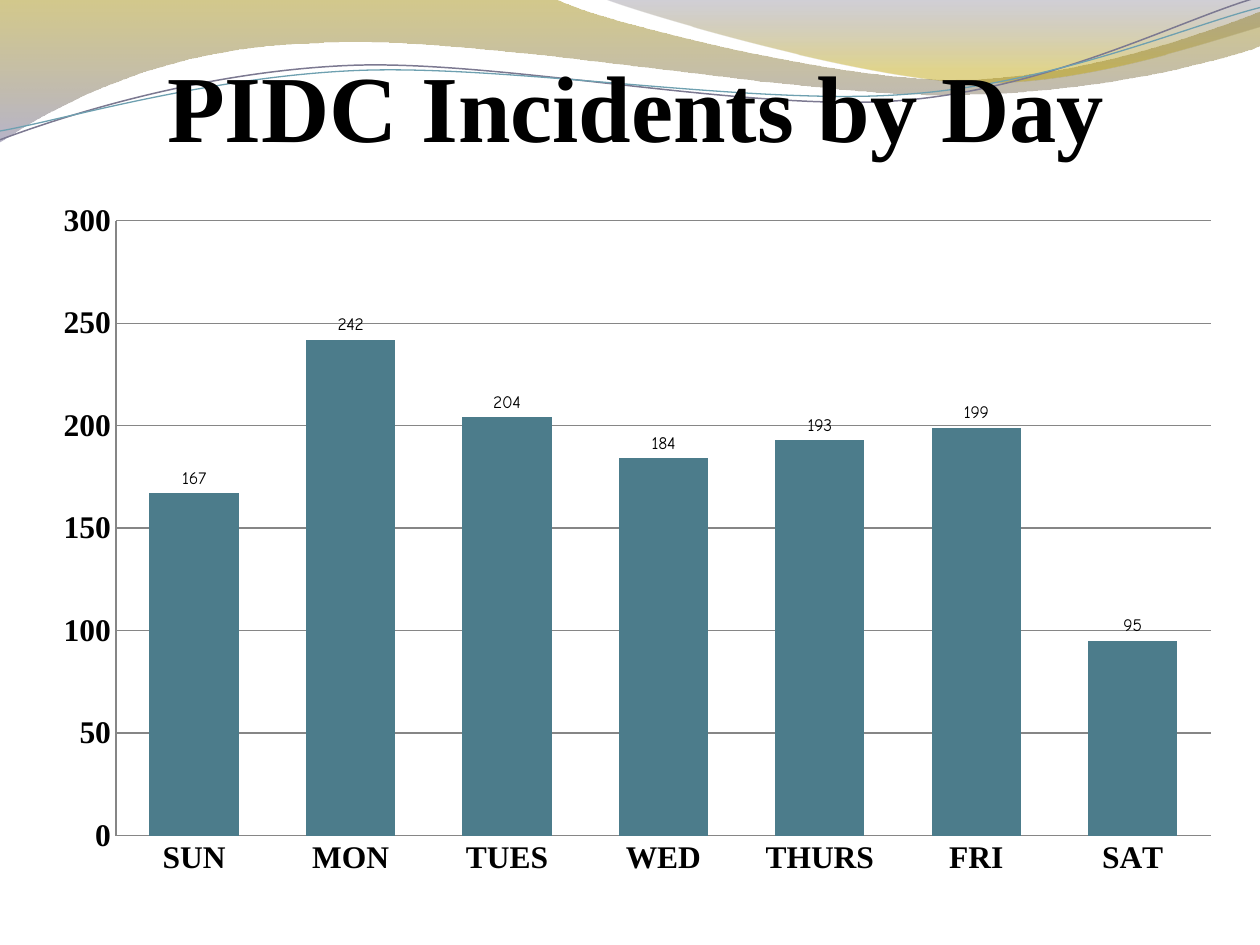
from dataclasses import dataclass

from lxml.etree import SubElement
from pptx import Presentation
from pptx.chart.data import CategoryChartData
from pptx.dml.color import RGBColor
from pptx.enum.chart import XL_CHART_TYPE, XL_LABEL_POSITION, XL_TICK_MARK
from pptx.enum.text import MSO_AUTO_SIZE, PP_ALIGN
from pptx.oxml import parse_xml
from pptx.oxml.ns import nsdecls, qn
from pptx.util import Inches, Pt


@dataclass(frozen=True)
class Theme:
    heading_font: str = "Times New Roman"
    label_font: str = "Comic Neue"
    title_size: int = 54
    axis_size: int = 18
    label_size: int = 10
    text: str = "000000"
    title_outline: str = "4D4D4D"
    bar: str = "4C7C8B"
    grid: str = "868686"
    upper_line: str = "7C7991"
    lower_line: str = "6EA0B0"
    # Gradient stops: position, colour, opacity in percent
    left_wave: tuple = ((0, "9E8700", 45), (1, "7B769C", 55))
    right_wave: tuple = ((0, "66627C", 30), (0.8, "BDA100", 45))


THEME = Theme()

# Each outline is a start point followed by lines (2 numbers) and Bézier curves (6 numbers).
LEFT_WAVE = [
    (0, 0), (4.4, -0.01), (4.76, 0.17, 6.64, 0.63, 7.58, 0.63),
    (8.53, 0.63, 9.58, 0.26, 10, 0.09), (10.01, 0.36),
    (9.83, 0.44, 8.7, 0.76, 7.46, 0.75), (6.22, 0.75, 3.82, 0.28, 2.57, 0.34),
    (1.29, 0.36, 0.46, 0.83, -0.01, 1.13),
]
RIGHT_WAVE = [
    (4.79, -0.01), (5.09, 0.11, 6.82, 0.62, 7.69, 0.65),
    (8.56, 0.69, 9.61, 0.32, 10, 0.21), (10, 0),
]
UPPER_LINE = [
    (0, 1.11), (0.48, 0.93, 1.58, 0.57, 2.77, 0.52),
    (3.95, 0.47, 5.93, 0.89, 7.13, 0.8), (8.33, 0.71, 9.38, 0.15, 9.98, -0.02),
]
LOWER_LINE = [
    (0, 1.04), (0.47, 0.96, 1.64, 0.61, 2.83, 0.56),
    (4.03, 0.51, 5.97, 0.84, 7.17, 0.75), (8.36, 0.67, 9.41, 0.21, 10, 0.06),
]
INCIDENTS = {"SUN": 167, "MON": 242, "TUES": 204, "WED": 184,
             "THURS": 193, "FRI": 199, "SAT": 95}


def rgb(color):
    return RGBColor.from_string(color)


def style_font(font, name, size, bold=False):
    font.name, font.size, font.bold = name, Pt(size), bold
    font.color.rgb = rgb(THEME.text)


def add_outline(slide, outline, close):
    """Draw every point as a line end, then join each curve's three lines into a Bézier."""
    start, *points = [(Inches(x), Inches(y)) for segment in outline
                      for x, y in zip(segment[::2], segment[1::2])]
    builder = slide.shapes.build_freeform(*start)
    builder.add_line_segments(points, close=close)
    shape = builder.convert_to_shape()
    shape.shadow.inherit = False

    lines = iter(list(shape._element.spPr.iter(qn("a:lnTo"))))
    for segment in outline[1:]:
        line = next(lines)
        if len(segment) == 6:
            curve = parse_xml(f'<a:cubicBezTo {nsdecls("a")}/>')
            line.addprevious(curve)
            for part in (line, next(lines), next(lines)):
                curve.append(part[0])
                part.getparent().remove(part)
    return shape


def add_wave(slide, outline, stops):
    wave = add_outline(slide, outline, close=True)
    wave.line.fill.background()
    wave.fill.gradient()
    wave.fill.gradient_angle = 270
    for stop, (position, color, _) in zip(wave.fill.gradient_stops, stops):
        stop.position = position
        stop.color.rgb = rgb(color)
    colors = wave._element.spPr.iter(qn("a:srgbClr"))
    for color, (_, _, opacity) in zip(colors, stops):
        SubElement(color, qn("a:alpha"), val=str(opacity * 1000))


def add_wave_line(slide, outline, color, width):
    wave_line = add_outline(slide, outline, close=False)
    wave_line.fill.background()
    wave_line.line.color.rgb = rgb(color)
    wave_line.line.width = Pt(width)


def style_axis(axis):
    axis.major_tick_mark = axis.minor_tick_mark = XL_TICK_MARK.NONE
    axis.format.line.color.rgb = rgb(THEME.grid)
    style_font(axis.tick_labels.font, THEME.heading_font, THEME.axis_size, bold=True)


def set_plot_area(chart, x, y, w, h):
    """Fix the inner plot area, in fractions of the chart."""
    plot_area = chart._chartSpace.chart.plotArea
    for layout in plot_area.findall(qn("c:layout")):
        plot_area.remove(layout)
    plot_area.insert(0, parse_xml(
        f'<c:layout {nsdecls("c")}><c:manualLayout><c:layoutTarget val="inner"/>'
        '<c:xMode val="edge"/><c:yMode val="edge"/>'
        f'<c:x val="{x}"/><c:y val="{y}"/><c:w val="{w}"/><c:h val="{h}"/>'
        '</c:manualLayout></c:layout>'))


def add_incident_chart(slide):
    data = CategoryChartData()
    data.categories = list(INCIDENTS)
    data.add_series("Series 1", list(INCIDENTS.values()))
    width, height = Inches(9.58), Inches(5.75)
    chart = slide.shapes.add_chart(
        XL_CHART_TYPE.COLUMN_CLUSTERED, Inches(0.25), Inches(1.58),
        width, height, data).chart
    chart.has_legend = chart.has_title = False
    style_font(chart.font, THEME.label_font, THEME.label_size)
    set_plot_area(chart, 0.07, 0.03, Inches(8.69) / width, Inches(4.88) / height)

    style_axis(chart.category_axis)
    counts = chart.value_axis
    style_axis(counts)
    counts.minimum_scale, counts.maximum_scale, counts.major_unit = 0, 300, 50
    counts.has_major_gridlines = True
    counts.major_gridlines.format.line.color.rgb = rgb(THEME.grid)

    bars = chart.plots[0]
    bars.gap_width, bars.overlap, bars.vary_by_categories = 75, -25, False
    fill = bars.series[0].format.fill
    fill.solid()
    fill.fore_color.rgb = rgb(THEME.bar)
    labels = bars.series[0].data_labels
    labels.show_value = True
    labels.position = XL_LABEL_POSITION.OUTSIDE_END
    style_font(labels.font, THEME.label_font, THEME.label_size)


def add_title(slide, title):
    frame = slide.shapes.add_textbox(
        Inches(0.67), Inches(0.33), Inches(8.75), Inches(1.01)).text_frame
    frame.word_wrap = True
    frame.auto_size = MSO_AUTO_SIZE.SHAPE_TO_FIT_TEXT
    frame.text = title
    paragraph = frame.paragraphs[0]
    paragraph.alignment = PP_ALIGN.CENTER
    run = paragraph.runs[0]
    style_font(run.font, THEME.heading_font, THEME.title_size, bold=True)
    run._r.get_or_add_rPr().insert(0, parse_xml(
        f'<a:ln {nsdecls("a")} w="{Pt(0.9)}"><a:solidFill>'
        f'<a:srgbClr val="{THEME.title_outline}"/></a:solidFill></a:ln>'))


def main():
    presentation = Presentation()
    presentation.slide_width, presentation.slide_height = Inches(10), Inches(7.5)
    slide = presentation.slides.add_slide(presentation.slide_layouts[6])
    add_wave(slide, LEFT_WAVE, THEME.left_wave)
    add_wave(slide, RIGHT_WAVE, THEME.right_wave)
    add_wave_line(slide, UPPER_LINE, THEME.upper_line, 0.85)
    add_wave_line(slide, LOWER_LINE, THEME.lower_line, 0.75)
    add_incident_chart(slide)
    add_title(slide, "PIDC Incidents by Day")
    presentation.save("out.pptx")


if __name__ == "__main__":
    main()
